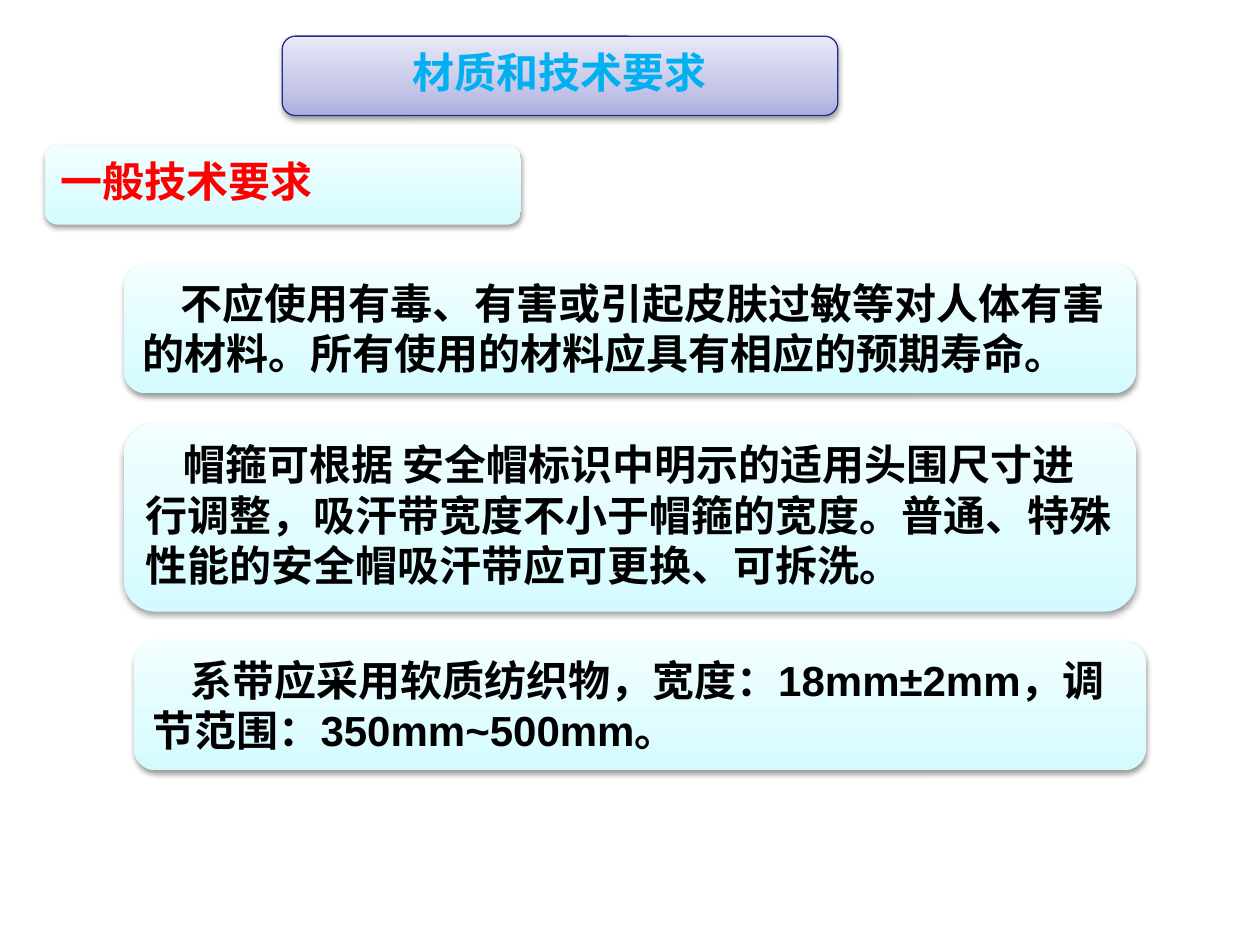
from copy import deepcopy

from lxml import etree
from pptx import Presentation
from pptx.dml.color import RGBColor
from pptx.enum.shapes import MSO_SHAPE
from pptx.enum.text import MSO_ANCHOR, PP_ALIGN
from pptx.oxml.ns import qn
from pptx.util import Cm, Pt

ROUND = MSO_SHAPE.ROUNDED_RECTANGLE
TOP = MSO_ANCHOR.TOP
LEFT = PP_ALIGN.LEFT
MID = PP_ALIGN.CENTER
LILAC = ("ADADE1", "C6C6E9", "E9E9F7")
AQUA = ("D3FBFF", "DFFCFF", "F2FEFF")
STOPS = (0, 0.35, 1)


def tint(code):
    return RGBColor.from_string(code)


class Deck:
    font = "Arial"
    size = Pt(24)

    def __init__(self):
        self.prs = Presentation()
        self.prs.slide_width = Cm(25.4)
        self.prs.slide_height = Cm(19.05)
        self.slide = self.prs.slides.add_slide(self.prs.slide_layouts[6])

    def blend(self, shape, shades):
        fill = shape.fill
        fill.gradient()
        fill.gradient_angle = 90
        first = next(shape.element.spPr.iter(qn("a:gs")))
        first.addnext(deepcopy(first))
        for stop, place, shade in zip(fill.gradient_stops, STOPS, shades):
            stop.position = place
            stop.color.rgb = tint(shade)

    def shade(self, shape):
        shape.shadow.inherit = False
        effects = shape.element.spPr.find(qn("a:effectLst"))
        outer = etree.SubElement(
            effects, qn("a:outerShdw"), blurRad="40000", dist="20000",
            dir="5400000", rotWithShape="0")
        color = etree.SubElement(outer, qn("a:srgbClr"), val="000000")
        etree.SubElement(color, qn("a:alpha"), val="38000")

    def label(self, shape, text, color, align, indent):
        frame = shape.text_frame
        frame.word_wrap = True
        frame.vertical_anchor = TOP
        frame.margin_left = frame.margin_right = Cm(0.25)
        frame.margin_top = frame.margin_bottom = Cm(0.13)
        frame.text = text
        para = frame.paragraphs[0]
        para.alignment = align
        if indent:
            props = para._p.get_or_add_pPr()
            props.set("marL", "0")
            props.set("indent", str(Cm(indent)))
        font = para.runs[0].font
        font.name = self.font
        font.size = self.size
        font.bold = True
        font.color.rgb = tint(color)

    def panel(self, box, text, color="000000", shades=AQUA, edge=None,
              align=LEFT, indent=0):
        shape = self.slide.shapes.add_shape(ROUND, *map(Cm, box))
        self.blend(shape, shades)
        if edge:
            shape.line.color.rgb = tint(edge)
            shape.line.width = Pt(0.75)
        else:
            shape.line.fill.background()
        self.shade(shape)
        self.label(shape, text, color, align, indent)


def main():
    deck = Deck()
    deck.panel((5.69, 0.73, 11.2, 1.6), "材质和技术要求", "00B0F0",
               LILAC, "2A2A89", MID)
    deck.panel((0.9, 2.93, 9.6, 1.6), "一般技术要求", "FF0000")
    rules = (
        (2.5, 5.33, 2.6,
         "不应使用有毒、有害或引起皮肤过敏等对人体有害的材料。"
         "所有使用的材料应具有相应的预期寿命。"),
        (2.5, 8.53, 3.8,
         "帽箍可根据 安全帽标识中明示的适用头围尺寸进行调整，"
         "吸汗带宽度不小于帽箍的宽度。"
         "普通、特殊性能的安全帽吸汗带应可更换、可拆洗。"),
        (2.7, 12.93, 2.6,
         "系带应采用软质纺织物，宽度：18mm±2mm，调节范围：350mm~500mm。"),
    )
    for left, top, height, text in rules:
        deck.panel((left, top, 20.4, height), text, indent=0.76)
    deck.prs.save("out.pptx")


if __name__ == "__main__":
    main()
